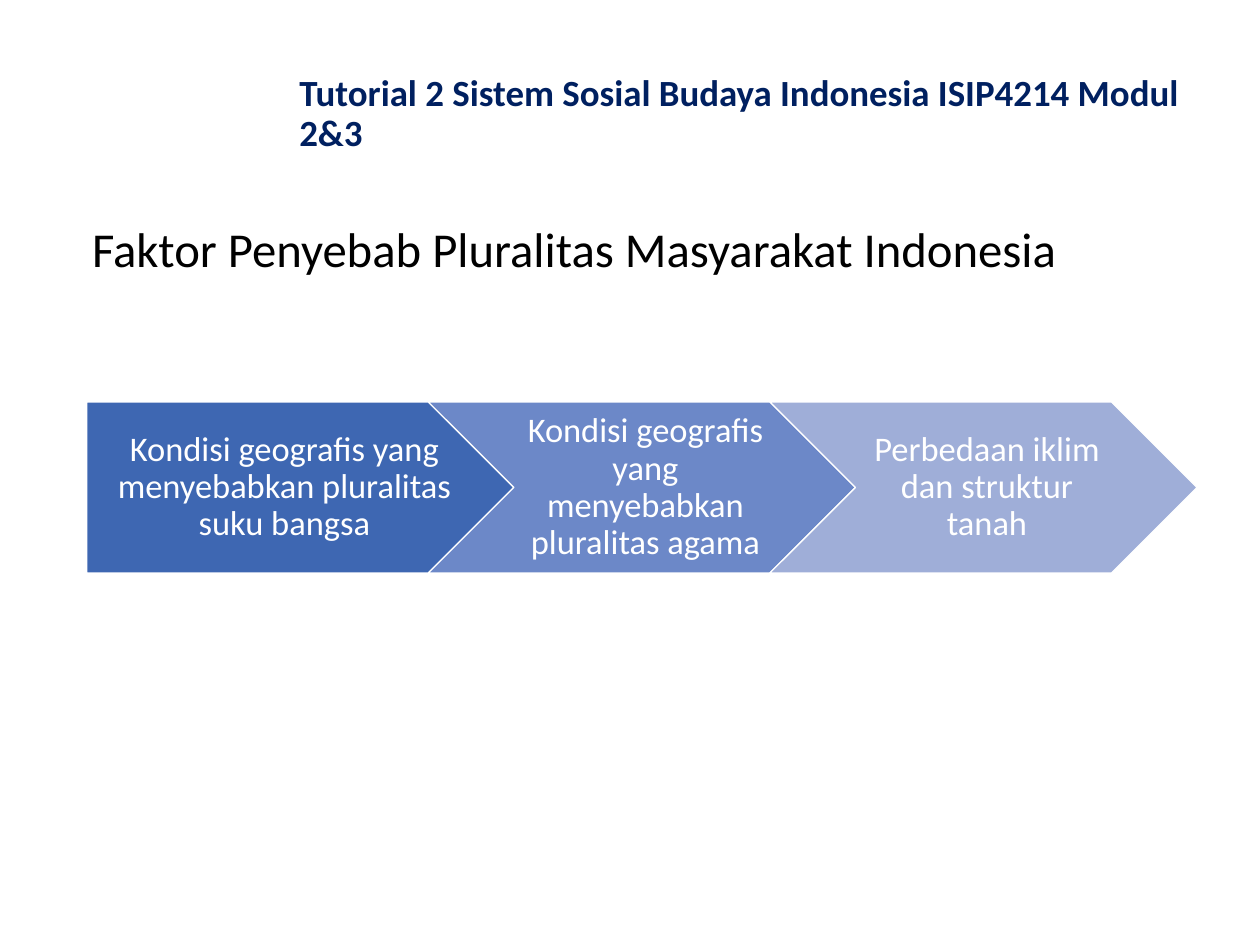
from pptx import Presentation
from pptx.dml.color import RGBColor
from pptx.enum.shapes import MSO_SHAPE
from pptx.enum.text import MSO_ANCHOR, PP_ALIGN
from pptx.util import Cm, Pt

HEADER = "Tutorial 2 Sistem Sosial Budaya Indonesia ISIP4214 Modul 2&3"
TITLE = "Faktor Penyebab Pluralitas Masyarakat Indonesia"
FACTORS = [
    ("Kondisi geografis yang menyebabkan pluralitas suku bangsa", MSO_SHAPE.PENTAGON, "3E67B2", 0.41),
    ("Kondisi geografis yang menyebabkan pluralitas agama", MSO_SHAPE.CHEVRON, "6C88C8", 0.3),
    ("Perbedaan iklim dan struktur tanah", MSO_SHAPE.CHEVRON, "9FAED8", 0.3),
]
FACTOR_LEFT, FACTOR_TOP = 2.49, 11.53
FACTOR_WIDTH, FACTOR_HEIGHT = 12.24, 4.9
FACTOR_STEP = FACTOR_WIDTH * 0.8


def paint(color_format, color):
    color_format.rgb = RGBColor.from_string(color)


def write(shape, text, size, color, bold=False, align=PP_ALIGN.LEFT):
    frame = shape.text_frame
    frame.word_wrap = True
    frame.vertical_anchor = MSO_ANCHOR.MIDDLE
    para = frame.paragraphs[0]
    para.alignment = align
    para.line_spacing = 0.9
    span = para.add_run()
    span.text = text
    span.font.name = "Calibri"
    span.font.size = Pt(size)
    span.font.bold = bold
    paint(span.font.color, color)


def add_factor(page, index, text, outline, color, inset):
    left = FACTOR_LEFT + index * FACTOR_STEP
    arrow = page.shapes.add_shape(
        outline, Cm(left), Cm(FACTOR_TOP), Cm(FACTOR_WIDTH), Cm(FACTOR_HEIGHT))
    arrow.shadow.inherit = False
    arrow.fill.solid()
    paint(arrow.fill.fore_color, color)
    paint(arrow.line.color, "FFFFFF")
    arrow.line.width = Pt(1)
    frame = arrow.text_frame
    frame.margin_left, frame.margin_right = Cm(inset), Cm(0.1)
    frame.margin_top = frame.margin_bottom = Cm(0.2)
    write(arrow, text, 28, "FFFFFF", align=PP_ALIGN.CENTER)


def main():
    deck = Presentation()
    deck.slide_width, deck.slide_height = Cm(36.12), Cm(27.1)
    page = deck.slides.add_slide(deck.slide_layouts[6])

    title = page.shapes.add_textbox(Cm(2.39), Cm(6.27), Cm(28.5), Cm(1.9))
    write(title, TITLE, 39.6, "000000")
    for index, factor in enumerate(FACTORS):
        add_factor(page, index, *factor)
    header = page.shapes.add_textbox(Cm(8.33), Cm(1.7), Cm(27.79), Cm(3.18))
    write(header, HEADER, 30, "002060", bold=True)

    deck.save("out.pptx")


if __name__ == "__main__":
    main()
